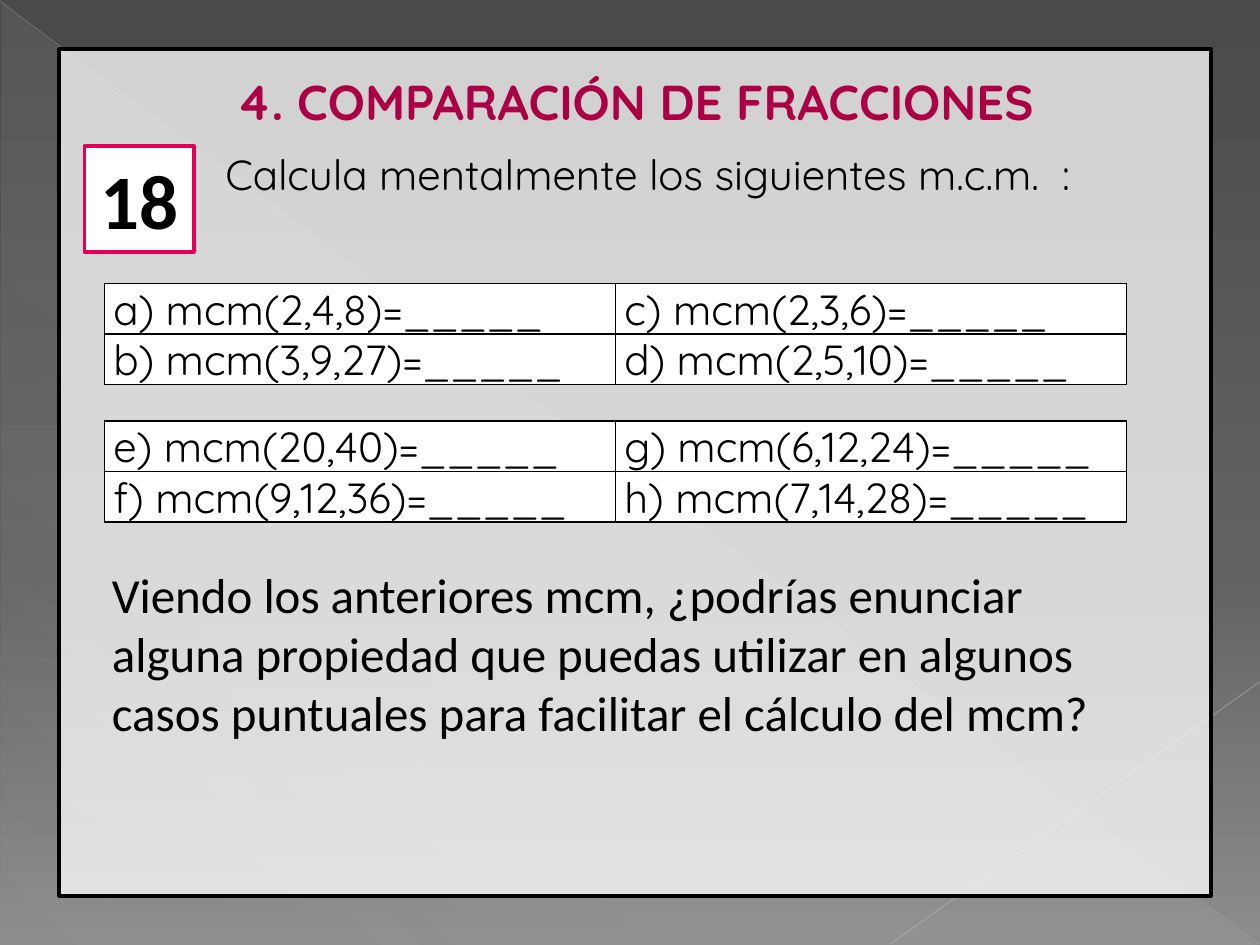
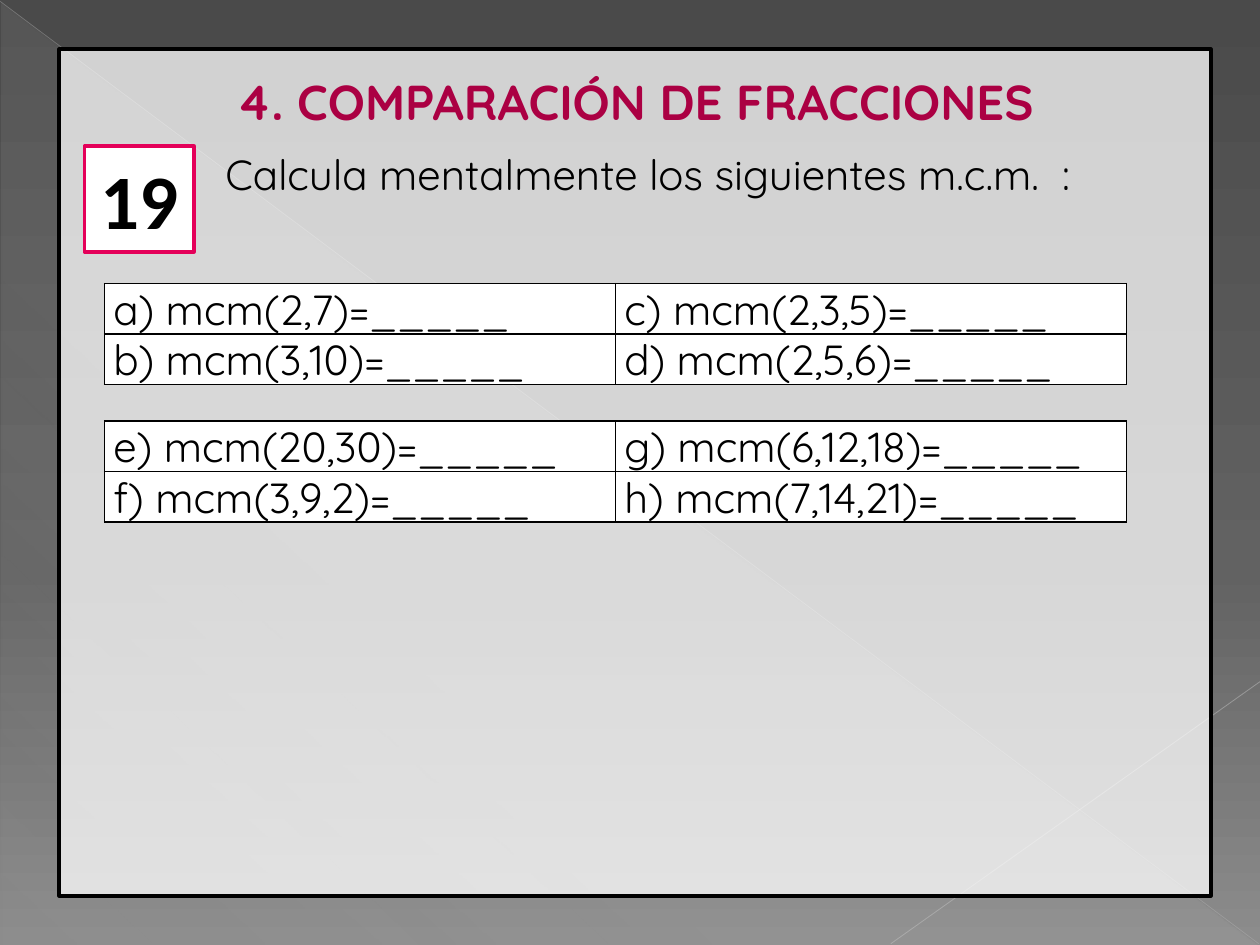
from dataclasses import dataclass
from lxml.etree import SubElement
from pptx import Presentation
from pptx.dml.color import RGBColor
from pptx.enum.shapes import MSO_CONNECTOR, MSO_SHAPE
from pptx.enum.text import MSO_ANCHOR, MSO_AUTO_SIZE, PP_ALIGN
from pptx.oxml.ns import qn
from pptx.util import Pt


@dataclass(frozen=True)
class Theme:
    ink: str = "000000"
    paper: str = "FFFFFF"
    head: str = "AB0043"
    edge: str = "E40059"
    long: str = "BFBFBF"
    short: str = "C6C6C6"
    sky: tuple = ((0, "4A4A4A", 100), (60, "626262", 100), (100, "8C8C8C", 100))
    sheen: tuple = ((0, "D2D2D2", 10), (70, "D2D2D2", 8), (100, "D2D2D2", 1))
    round_face: str = "Quicksand"
    plain_face: str = "Calibri"
    large: int = 44
    mid: int = 28
    small: int = 24


@dataclass(frozen=True)
class Box:
    x: float
    y: float
    w: float
    h: float

    def inner(self, x, y, w, h):
        return Box(self.x + x, self.y + y, w, h)

    def pts(self):
        return [Pt(v) for v in (self.x, self.y, self.w, self.h)]


THEME = Theme()
PAGE = Box(0, 0, 720, 540)
PANEL = Box(33.84, 28.08, 658.08, 483.84)
TITLE = "4. COMPARACIÓN DE FRACCIONES"
PROMPT = "Calcula mentalmente los siguientes m.c.m.  :"
CLOSING = ("Viendo los anteriores mcm, ¿podrías enunciar alguna propiedad que puedas "
           "utilizar en algunos casos puntuales para facilitar el cálculo del mcm?")
TASKS = [
    ("18", ["2,4,8", "3,9,27", "2,3,6", "2,5,10",
            "20,40", "9,12,36", "6,12,24", "7,14,28"], CLOSING),
    ("19", ["2,7", "3,10", "2,3,5", "2,5,6",
            "20,30", "3,9,2", "6,12,18", "7,14,21"], None),
]


def apply(item, **values):
    for name, value in values.items():
        setattr(item, name, value)


def tint(target, color):
    target.solid()
    target.fore_color.rgb = RGBColor.from_string(color)


def stroke(line, color, width):
    tint(line.fill, color)
    line.width = Pt(width)


def fade(shape, amount):
    color = next(shape.element.iter(qn("a:srgbClr")))
    SubElement(color, qn("a:alpha"), val=str(amount * 1000))


def blend(fill, root, stops, angle):
    fill.gradient()
    grad = next(root.iter(qn("a:gradFill")))
    for child in list(grad):
        grad.remove(child)
    row = SubElement(grad, qn("a:gsLst"))
    for place, color, alpha in stops:
        stop = SubElement(row, qn("a:gs"), pos=str(place * 1000))
        node = SubElement(stop, qn("a:srgbClr"), val=color)
        if alpha < 100:
            SubElement(node, qn("a:alpha"), val=str(alpha * 1000))
    SubElement(grad, qn("a:lin"), ang=str(angle * 60000), scaled="0")


def write(frame, text, size, face, color=THEME.ink, bold=False,
          align=PP_ALIGN.LEFT, anchor=MSO_ANCHOR.TOP):
    apply(frame, text=text, word_wrap=True, vertical_anchor=anchor)
    line = frame.paragraphs[0]
    line.alignment = align
    apply(line.font, size=Pt(size), name=face, bold=bold)
    line.font.color.rgb = RGBColor.from_string(color)


def block(shapes, kind, box):
    shape = shapes.add_shape(kind, *box.pts())
    shape.shadow.inherit = False
    return shape


def streak(shapes, ends, color, width, alpha):
    line = shapes.add_connector(MSO_CONNECTOR.STRAIGHT, *[Pt(v) for v in ends])
    stroke(line.line, color, width)
    fade(line, alpha)
    SubElement(line.element.spPr, qn("a:effectLst"))
    return line


def backdrop(master, shapes, page, panel):
    blend(master.background.fill, master.element, THEME.sky, 90)
    corner = block(shapes, MSO_SHAPE.RIGHT_TRIANGLE, page.inner(0.72, 1.44, 718.56, 538.56))
    blend(corner.fill, corner.element, THEME.sheen, 133)
    corner.line.fill.background()
    right, low = page.x + page.w, page.y + page.h
    long = streak(shapes, (page.x, page.y + 0.72, right - 0.72, low - 0.72), THEME.long, 0.39, 35)
    short = streak(shapes, (right, low - 150.48, right - 210.96, low - 0.72), THEME.short, 0.47, 45)
    sheet = block(shapes, MSO_SHAPE.RECTANGLE, panel)
    tint(sheet.fill, THEME.paper)
    fade(sheet, 75)
    stroke(sheet.line, THEME.ink, 2)
    for mark, shape in enumerate((corner, long, short, sheet), 101):
        next(shape.element.iter(qn("p:cNvPr"))).set("id", str(mark))
        master.shapes.element.append(shape.element)


def heading(title, box):
    for name, value in zip(("left", "top", "width", "height"), box.pts()):
        setattr(title, name, value)
    write(title.text_frame, TITLE, THEME.mid, THEME.round_face, THEME.head, True, PP_ALIGN.CENTER)
    title.text_frame.auto_size = MSO_AUTO_SIZE.NONE


def badge(shapes, box, number):
    shape = block(shapes, MSO_SHAPE.RECTANGLE, box)
    tint(shape.fill, THEME.paper)
    stroke(shape.line, THEME.edge, 2)
    write(shape.text_frame, number, THEME.large, THEME.plain_face, bold=True,
          align=PP_ALIGN.CENTER, anchor=MSO_ANCHOR.MIDDLE)


def note(shapes, box, text, size, face):
    write(shapes.add_textbox(*box.pts()).text_frame, text, size, face)


def border(cell):
    props = cell._tc.get_or_add_tcPr()
    for spot, side in enumerate(("a:lnL", "a:lnR", "a:lnT", "a:lnB")):
        line = props.makeelement(qn(side), {"w": str(Pt(1))})
        fill = SubElement(line, qn("a:solidFill"))
        SubElement(fill, qn("a:srgbClr"), val=THEME.ink)
        props.insert(spot, line)


def grid(shapes, box, letters, terms):
    table = shapes.add_table(2, 2, *box.pts()).table
    apply(table, first_row=False, horz_banding=False)
    for spot, (letter, term) in enumerate(zip(letters, terms)):
        col, row = divmod(spot, 2)
        cell = table.cell(row, col)
        apply(cell, margin_left=Pt(5), margin_right=Pt(5), margin_top=0, margin_bottom=0)
        tint(cell.fill, THEME.paper)
        border(cell)
        write(cell.text_frame, f"{letter}) mcm({term})=_____", THEME.small, THEME.round_face)


def lesson(slide, box, number, terms, closing):
    shapes = slide.shapes
    heading(shapes.title, box.inner(14.4, 9.36, 629.28, 41.04))
    badge(shapes, box.inner(14.4, 55.44, 62.64, 60.48), number)
    note(shapes, box.inner(87.84, 53.28, 555.84, 65.52), PROMPT, THEME.small, THEME.round_face)
    for half in range(2):
        four = slice(half * 4, half * 4 + 4)
        grid(shapes, box.inner(25.92, 133.92 + half * 78.48, 584, 57.6),
             "abcdefgh"[four], terms[four])
    if closing:
        note(shapes, box.inner(23.04, 290.88, 586.8, 108.72), closing, THEME.mid, THEME.plain_face)


def main():
    deck = Presentation()
    apply(deck, slide_width=Pt(PAGE.w), slide_height=Pt(PAGE.h))
    slides = [deck.slides.add_slide(deck.slide_layouts[5]) for _ in TASKS]
    backdrop(deck.slide_master, slides[0].shapes, PAGE, PANEL)
    for slide, task in zip(slides, TASKS):
        lesson(slide, PANEL, *task)
    deck.save("out.pptx")


if __name__ == "__main__":
    main()
